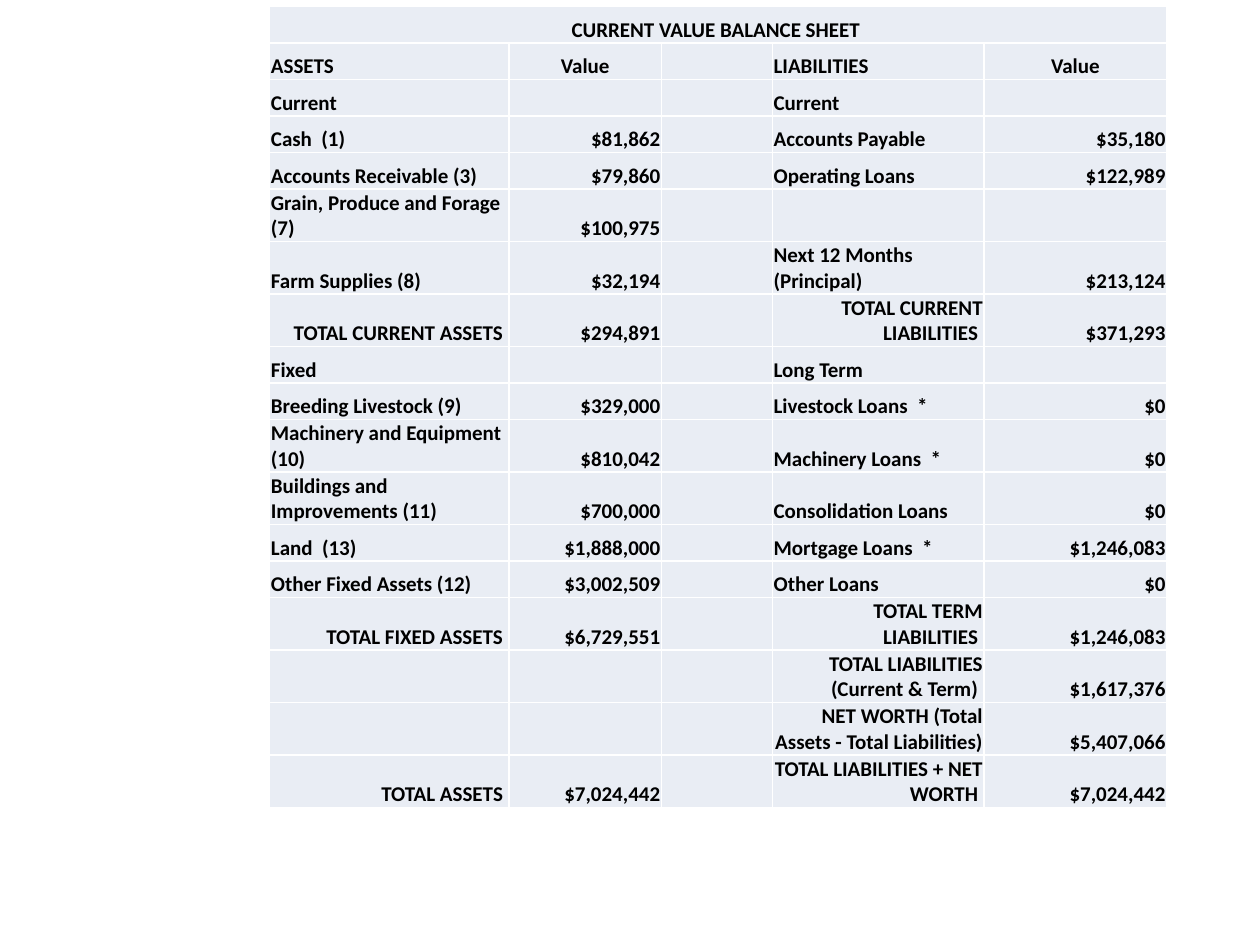
from dataclasses import dataclass

from lxml import etree
from pptx import Presentation
from pptx import util as u
from pptx.dml.color import RGBColor
from pptx.enum import text
from pptx.oxml import ns


@dataclass(frozen=True)
class Theme:
    font: str = "Calibri"
    size: int = 12
    ink: str = "000000"
    fill: str = "E9EDF4"
    rule: str = "FFFFFF"
    rule_pt: float = 1


THEME = Theme()
WIDE, HIGH = u.Inches(10), u.Inches(7.5)
LEFT, TOP = 0.214, 0.0067  # shares of the slide
COLS = (0.19, 0.121, 0.088, 0.168, 0.145)  # shares of the slide width
ROWS = {1: 0.29, 2: 0.41}  # inches, by lines of text
VALUE_COLS = (1, 4)

TITLE = "CURRENT VALUE BALANCE SHEET "
HEAD = ("ASSETS", "Value", "LIABILITIES", "Value")
# lines of text, asset, value, liability, value
SHEET = [
    (1, "Current", "", "Current", ""),
    (1, "Cash  (1)", "$81,862", "Accounts Payable", "$35,180"),
    (1, "Accounts Receivable (3)", "$79,860", "Operating Loans", "$122,989"),
    (2, "Grain, Produce and Forage  (7)", "$100,975", "", ""),
    (2, "Farm Supplies (8)", "$32,194", "Next 12 Months (Principal)", "$213,124"),
    (2, "TOTAL CURRENT ASSETS ", "$294,891", "TOTAL CURRENT LIABILITIES ", "$371,293"),
    (1, "Fixed", "", "Long Term", ""),
    (1, "Breeding Livestock (9)", "$329,000", "Livestock Loans  *", "$0"),
    (2, "Machinery and Equipment (10)", "$810,042", "Machinery Loans  *", "$0"),
    (2, "Buildings and Improvements (11)", "$700,000", "Consolidation Loans", "$0"),
    (1, "Land  (13)", "$1,888,000", "Mortgage Loans  *", "$1,246,083"),
    (1, "Other Fixed Assets (12)", "$3,002,509", "Other Loans", "$0"),
    (1, "TOTAL FIXED ASSETS ", "$6,729,551", "TOTAL TERM LIABILITIES ", "$1,246,083"),
    (2, "", "", "TOTAL LIABILITIES (Current & Term) ", "$1,617,376"),
    (2, "", "", "NET WORTH (Total Assets - Total Liabilities) ", "$5,407,066"),
    (2, "TOTAL ASSETS ", "$7,024,442", "TOTAL LIABILITIES + NET WORTH ", "$7,024,442"),
]


def rule(cell):
    """Draw the thin line on all four sides of a cell."""
    props = cell._tc.get_or_add_tcPr()
    for spot, side in enumerate(("lnL", "lnR", "lnT", "lnB")):
        line = etree.Element(ns.qn("a:" + side), w=str(u.Pt(THEME.rule_pt)))
        fill = etree.SubElement(line, ns.qn("a:solidFill"))
        etree.SubElement(fill, ns.qn("a:srgbClr"), val=THEME.rule)
        props.insert(spot, line)


def write(cell, words, align):
    cell.margin_left = cell.margin_right = cell.margin_top = u.Inches(0.01)
    cell.margin_bottom = 0
    cell.vertical_anchor = text.MSO_ANCHOR.BOTTOM
    cell.fill.solid()
    cell.fill.fore_color.rgb = RGBColor.from_string(THEME.fill)
    rule(cell)
    para = cell.text_frame.paragraphs[0]
    if not words:
        # An empty cell needs its own type size to keep the row low.
        etree.SubElement(para._p, ns.qn("a:endParaRPr"), sz=str(THEME.size * 100))
        return
    para.text = words
    para.alignment = align
    for run in para.runs:
        run.font.name = THEME.font
        run.font.size = u.Pt(THEME.size)
        run.font.bold = True
        run.font.color.rgb = RGBColor.from_string(THEME.ink)


def side(row, col, words):
    """Titles and heads of values are centred, values and totals go right."""
    if row == 0 or (row == 1 and col in VALUE_COLS):
        return text.PP_ALIGN.CENTER
    if col in VALUE_COLS or words.startswith(("TOTAL", "NET WORTH")):
        return text.PP_ALIGN.RIGHT
    return text.PP_ALIGN.LEFT


def add_sheet(slide):
    rows = [(1, TITLE, "", "", ""), (1, *HEAD), *SHEET]
    highs = [u.Inches(ROWS[lines]) for lines, *_ in rows]
    frame = slide.shapes.add_table(
        len(rows), len(COLS), int(WIDE * LEFT), int(HIGH * TOP),
        int(WIDE * sum(COLS)), sum(highs))
    table = frame.table
    table.first_row = table.horz_banding = False
    for col, share in zip(table.columns, COLS):
        col.width = int(WIDE * share)
    for r, (_, asset, worth, debt, owed) in enumerate(rows):
        table.rows[r].height = highs[r]
        for c, words in enumerate((asset, worth, "", debt, owed)):
            write(table.cell(r, c), words, side(r, c, words))
    table.cell(0, 0).merge(table.cell(0, len(COLS) - 1))


def main():
    deck = Presentation()
    deck.slide_width, deck.slide_height = WIDE, HIGH
    add_sheet(deck.slides.add_slide(deck.slide_layouts[6]))
    deck.save("out.pptx")


if __name__ == "__main__":
    main()
